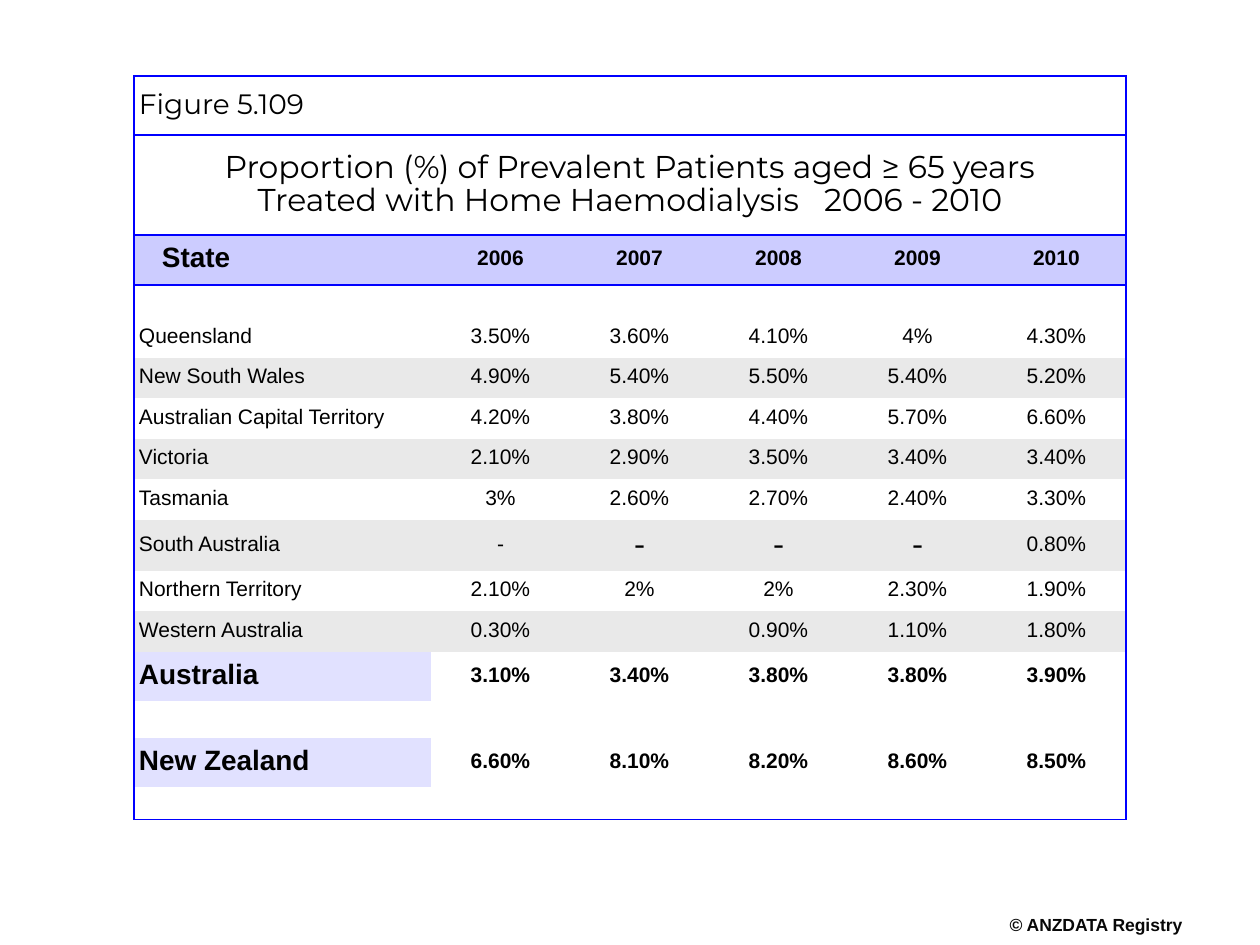
from lxml.etree import SubElement
from pptx import Presentation
from pptx.dml.color import RGBColor
from pptx.enum.text import MSO_ANCHOR as Anchor, PP_ALIGN as Align
from pptx.oxml.ns import qn
from pptx.util import Emu, Pt

BLACK = RGBColor(0, 0, 0)
INK = RGBColor(8, 8, 8)
BLUE = RGBColor(0, 0, 255)
LILAC = RGBColor(0xCC, 0xCC, 0xFF)
PALE = RGBColor(0xE1, 0xE1, 0xFF)
GREY = RGBColor(0xE9, 0xE9, 0xE9)

WIDTHS = [297] + [139] * 5
HEIGHTS = [59, 100, 50, 32, 41, 40, 41, 40, 41, 51, 40, 41, 49, 37, 49, 33]
HEAD, LAST = 2, len(HEIGHTS) - 1
FIGURE = "Figure 5.109"
TITLE = ("Proportion (%) of Prevalent Patients aged ≥ 65 years\n"
         "Treated with Home Haemodialysis")
SPAN = "2006 - 2010"
YEARS = ["State", "2006", "2007", "2008", "2009", "2010"]
STATES = [
    ["Queensland", "3.50%", "3.60%", "4.10%", "4%", "4.30%"],
    ["New South Wales", "4.90%", "5.40%", "5.50%", "5.40%", "5.20%"],
    ["Australian Capital Territory", "4.20%", "3.80%", "4.40%", "5.70%", "6.60%"],
    ["Victoria", "2.10%", "2.90%", "3.50%", "3.40%", "3.40%"],
    ["Tasmania", "3%", "2.60%", "2.70%", "2.40%", "3.30%"],
    ["South Australia", "-", "-", "-", "-", "0.80%"],
    ["Northern Territory", "2.10%", "2%", "2%", "2.30%", "1.90%"],
    ["Western Australia", "0.30%", "", "0.90%", "1.10%", "1.80%"],
]
TOTALS = {
    12: ["Australia", "3.10%", "3.40%", "3.80%", "3.80%", "3.90%"],
    14: ["New Zealand", "6.60%", "8.10%", "8.20%", "8.60%", "8.50%"],
}


def px(n):
    """Turn pixels into EMU."""
    return Emu(round(n * 914400 / 126))


def style(frame, size, face="Arial", bold=False, align=Align.LEFT, color=BLACK):
    """Format all paragraphs and runs of a text frame."""
    for para in frame.paragraphs:
        para.alignment = align
        para.line_spacing = 0.85
        for run in para.runs:
            font = run.font
            font.size, font.name, font.bold = Pt(size), face, bold
            font.color.rgb = color
        if not para.runs:
            para._p.get_or_add_endParaRPr().set("sz", "800")


def edge(cell, sides):
    """Draw the named sides of a cell in blue and clear the others."""
    props = cell._tc.get_or_add_tcPr()
    for side in "LRTB":
        line = SubElement(props, qn("a:ln" + side), w=str(Pt(1)))
        if side in sides:
            fill = SubElement(line, qn("a:solidFill"))
            SubElement(fill, qn("a:srgbClr"), val=str(BLUE))
        else:
            SubElement(line, qn("a:noFill"))


def sides(row, col):
    """Name the ruled sides of the cell at a place in the grid."""
    if row < HEAD:
        return "LRTB"
    rule = {HEAD: "TB", HEAD + 1: "T", LAST: "B"}.get(row, "")
    return rule + {0: "L", 5: "R"}.get(col, "")


def shade(row, col):
    """Choose the fill of a cell, or none."""
    if row == HEAD:
        return LILAC
    if row in TOTALS and col == 0:
        return PALE
    return GREY if row in range(5, 12, 2) else None


def frame_cell(cell, row, col):
    """Set the margins, borders and fill of a cell."""
    cell.vertical_anchor = Anchor.MIDDLE
    cell.margin_left = cell.margin_right = px(5)
    cell.margin_top = cell.margin_bottom = px(5)
    edge(cell, sides(row, col))
    tone = shade(row, col)
    if tone is None:
        cell.fill.background()
    else:
        cell.fill.solid()
        cell.fill.fore_color.rgb = tone


def fill_row(table, row, words):
    """Write one row of a label and five values."""
    strong = row == HEAD or row in TOTALS
    for col, word in enumerate(words):
        frame = table.cell(row, col).text_frame
        frame.text = word
        if col == 0:
            style(frame, 16 if strong else 12, bold=strong)
        elif word == "-" and col > 1:
            style(frame, 18, "Times New Roman", align=Align.CENTER)
        else:
            style(frame, 12, bold=strong, align=Align.CENTER)


def add_title(table):
    """Write the figure number and title across the table."""
    for row in range(HEAD):
        table.cell(row, 0).merge(table.cell(row, 5))
    frame = table.cell(0, 0).text_frame
    frame.text = FIGURE
    style(frame, 16, "Montserrat")
    frame = table.cell(1, 0).text_frame
    frame.text = TITLE
    para = frame.paragraphs[1]
    gap = para.add_run()
    gap.text = " "
    para.add_run().text = SPAN
    style(frame, 18, "Montserrat", align=Align.CENTER)
    gap._r.get_or_add_rPr().set("spc", "940")


def add_grid(slide):
    """Build the table of states by year."""
    table = slide.shapes.add_table(
        len(HEIGHTS), len(WIDTHS), px(134), px(76),
        px(sum(WIDTHS)), px(sum(HEIGHTS))).table
    table.first_row = table.horz_banding = False
    for col, width in zip(table.columns, WIDTHS):
        col.width = px(width)
    for line, height in zip(table.rows, HEIGHTS):
        line.height = px(height)
    for row in range(len(HEIGHTS)):
        for col in range(len(WIDTHS)):
            frame_cell(table.cell(row, col), row, col)
    add_title(table)
    body = {HEAD: YEARS, **dict(enumerate(STATES, 4)), **TOTALS}
    for row in range(HEAD, len(HEIGHTS)):
        fill_row(table, row, body.get(row, [""] * 6))
    table.cell(HEAD, 0).margin_left = px(28)


def add_credit(slide):
    """Add the copyright line."""
    frame = slide.shapes.add_textbox(px(1007), px(917), px(178), px(21)).text_frame
    frame.margin_left = frame.margin_right = 0
    frame.margin_top = frame.margin_bottom = 0
    frame.word_wrap = False
    frame.text = "© ANZDATA Registry"
    style(frame, 10, bold=True, align=Align.CENTER, color=INK)


def main():
    """Build and save the slide."""
    deck = Presentation()
    deck.slide_width, deck.slide_height = px(1260), px(945)
    slide = deck.slides.add_slide(deck.slide_layouts[6])
    add_credit(slide)
    add_grid(slide)
    deck.save("out.pptx")


if __name__ == "__main__":
    main()
